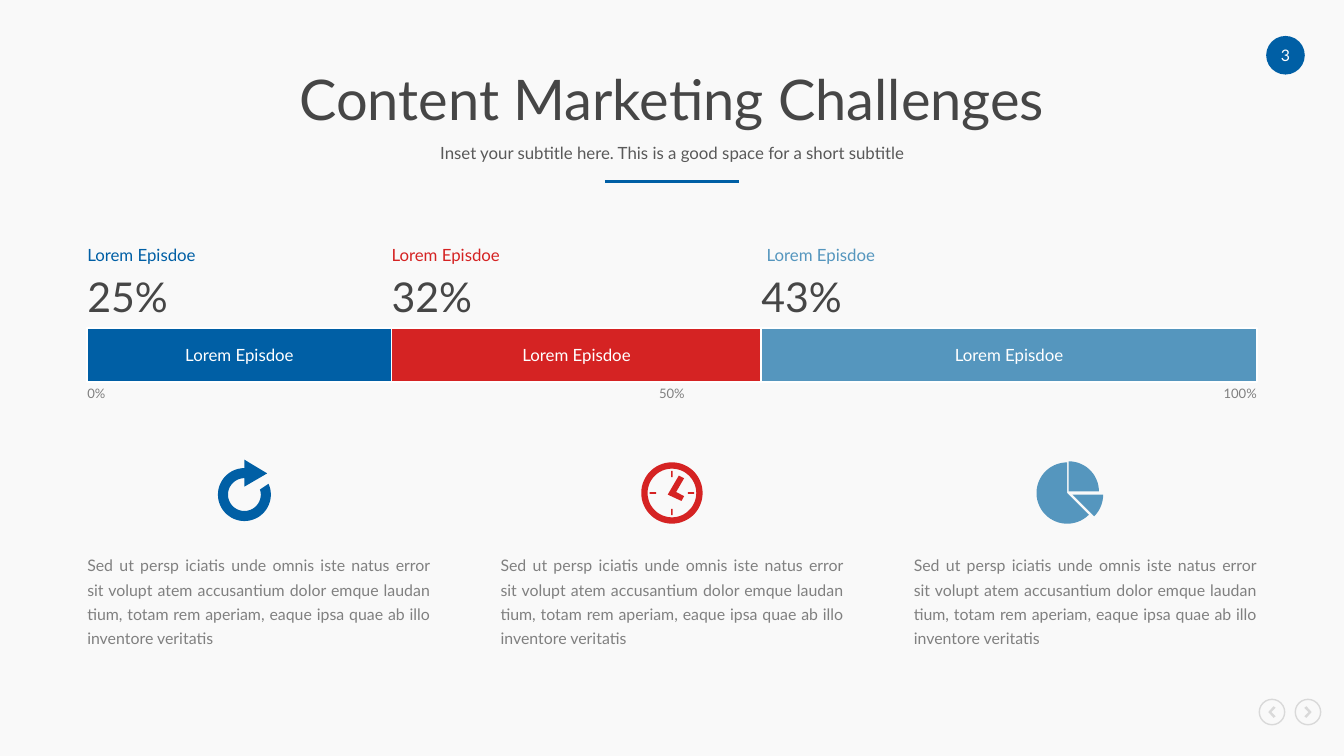
import math
from dataclasses import dataclass

import lxml.etree
import pptx
import pptx.dml.color
import pptx.enum.shapes
import pptx.enum.text
import pptx.oxml.ns
import pptx.util

Cm, Pt = pptx.util.Cm, pptx.util.Pt
ALIGN = pptx.enum.text.PP_ALIGN
MIDDLE = pptx.enum.text.MSO_ANCHOR.MIDDLE
SHAPE = pptx.enum.shapes.MSO_SHAPE
Point = tuple[float, float]
Path = list[Point]

BLUE, RED, SKY = "005FA5", "D52323", "5596BE"
DARK, SLATE, GRAY, PALE, WHITE = "464646", "595959", "808080", "D9D9D9", "FFFFFF"
LEFT, WIDE = 1.65, 22.1
LABEL = "Lorem Episdoe"
BODY = (
    "Sed ut persp iciatis unde omnis iste natus error sit volupt atem "
    "accusantium dolor emque laudan tium, totam rem aperiam, eaque ipsa "
    "quae ab illo inventore veritatis"
)


@dataclass
class Box:
    left: float
    top: float
    width: float
    height: float


@dataclass
class Style:
    size: float
    color: str
    align: ALIGN = ALIGN.LEFT


@dataclass
class Part:
    """One section of the bar."""
    share: str
    width: float
    color: str
    indent: float = 0


@dataclass
class Icon:
    x: float
    y: float
    color: str
    paths: list[Path]


def rgb(code: str):
    return pptx.dml.color.RGBColor.from_string(code)


def place(box: Box) -> list:
    return [Cm(n) for n in (box.left, box.top, box.width, box.height)]


def write(shape, text: str, style: Style):
    frame = shape.text_frame
    frame.word_wrap = True
    frame.margin_left = frame.margin_right = 0
    frame.margin_top = frame.margin_bottom = 0
    frame.text = text
    line = frame.paragraphs[0]
    line.alignment = style.align
    line.font.name = "Lato"
    line.font.size = Pt(style.size)
    line.font.color.rgb = rgb(style.color)
    return line


def add_text(slide, box: Box, text: str, style: Style):
    return write(slide.shapes.add_textbox(*place(box)), text, style)


def paint(shape, fill: str | None, edge: str | None = None, weight: float = 1) -> None:
    shape.shadow.inherit = False
    if fill:
        shape.fill.solid()
        shape.fill.fore_color.rgb = rgb(fill)
    else:
        shape.fill.background()
    if edge:
        shape.line.color.rgb = rgb(edge)
        shape.line.width = Pt(weight)
    else:
        shape.line.fill.background()


def add_shape(slide, kind: SHAPE, box: Box, fill: str | None, edge: str | None = None, weight: float = 1):
    shape = slide.shapes.add_shape(kind, *place(box))
    paint(shape, fill, edge, weight)
    return shape


def arc(radius: float, start: int, end: int, x: float = 0, y: float = 0) -> Path:
    """Points on a circle; degrees run clockwise from the right."""
    steps = max(2, abs(end - start) // 6)
    turns = [math.radians(start + (end - start) * i / steps) for i in range(steps + 1)]
    return [(x + radius * math.cos(a), y + radius * math.sin(a)) for a in turns]


def wedge(radius: float, start: int, end: int, x: float = 0, y: float = 0) -> Path:
    return [(x, y)] + arc(radius, start, end, x, y)


def block(x: float, y: float, wide: float, high: float) -> Path:
    """A rectangle around its centre."""
    a, b = wide / 2, high / 2
    return [(x - a, y - b), (x + a, y - b), (x + a, y + b), (x - a, y + b)]


def add_icon(slide, icon: Icon) -> None:
    paths = [[(Cm(icon.x + x), Cm(icon.y + y)) for x, y in path] for path in icon.paths]
    pen = slide.shapes.build_freeform(*paths[0][0])
    pen.add_line_segments(paths[0][1:], close=True)
    for path in paths[1:]:
        pen.move_to(*path[0])
        pen.add_line_segments(path[1:], close=True)
    paint(pen.convert_to_shape(), icon.color)


def add_head(slide) -> None:
    title = slide.shapes.title
    title.left, title.top, title.width, title.height = place(Box(LEFT, 1.22, WIDE, 1.27))
    write(title, "Content Marketing Challenges", Style(30, DARK, ALIGN.CENTER))
    title.text_frame.vertical_anchor = MIDDLE
    title.text_frame.auto_size = pptx.enum.text.MSO_AUTO_SIZE.NONE

    note = slide.shapes.add_textbox(*place(Box(LEFT, 2.57, WIDE, 0.64)))
    write(note, "Inset your subtitle here. This is a good space for a short subtitle",
          Style(9, SLATE, ALIGN.CENTER))
    note.text_frame.vertical_anchor = MIDDLE

    rule = slide.shapes.add_connector(
        pptx.enum.shapes.MSO_CONNECTOR.STRAIGHT, Cm(11.43), Cm(3.43), Cm(13.97), Cm(3.43))
    rule.line.color.rgb = rgb(BLUE)
    rule.line.width = Pt(1.5)
    lxml.etree.SubElement(rule._element.spPr, pptx.oxml.ns.qn("a:effectLst"))

    badge = add_shape(slide, SHAPE.OVAL, Box(23.93, 0.68, 0.73, 0.73), BLUE)
    write(badge, "3", Style(8.5, WHITE, ALIGN.CENTER))
    badge.text_frame.vertical_anchor = MIDDLE


def add_bar(slide, parts: list[Part]) -> None:
    left = LEFT
    for part in parts:
        add_text(slide, Box(left + part.indent, 4.62, 2.8, 0.41), LABEL, Style(9, part.color))
        add_text(slide, Box(left, 5.13, 2.03, 0.91), part.share, Style(22, DARK))
        bar = add_shape(slide, SHAPE.RECTANGLE, Box(left, 6.2, part.width, 1.02), part.color, WHITE)
        write(bar, LABEL, Style(9, WHITE, ALIGN.CENTER))
        bar.text_frame.vertical_anchor = MIDDLE
        left += part.width

    marks = [("0%", ALIGN.LEFT), ("50%", ALIGN.CENTER), ("100%", ALIGN.RIGHT)]
    for i, (text, align) in enumerate(marks):
        add_text(slide, Box(LEFT + i * (WIDE - 0.9) / 2, 7.29, 0.9, 0.3), text, Style(7, GRAY, align))


def add_notes(slide) -> None:
    width = 6.48
    for i in range(3):
        box = Box(LEFT + i * (WIDE - width) / 2, 10.41, width, 1.8)
        line = add_text(slide, box, BODY, Style(8.5, GRAY, ALIGN.JUSTIFY))
        line.line_spacing = Pt(13)
        line.space_after = Pt(12)


def add_arrows(slide) -> None:
    """The back and next buttons in the corner."""
    chevron = [(-0.07, 0), (0.03, -0.11), (0.07, -0.08), (-0.01, 0), (0.07, 0.08), (0.03, 0.11)]
    for x, side in ((24.04, 1), (24.72, -1)):
        add_shape(slide, SHAPE.OVAL, Box(x - 0.24, 13.22, 0.48, 0.48), None, PALE, 0.75)
        add_icon(slide, Icon(x, 13.46, PALE, [[(side * a, b) for a, b in chevron]]))


def main() -> None:
    deck = pptx.Presentation()
    deck.slide_width, deck.slide_height = Cm(25.4), Cm(14.29)
    slide = deck.slides.add_slide(deck.slide_layouts.get_by_name("Title Only"))
    slide.background.fill.solid()
    slide.background.fill.fore_color.rgb = rgb("F9F9F9")

    add_head(slide)
    add_bar(slide, [Part("25%", 5.75, BLUE), Part("32%", 6.99, RED), Part("43%", 9.36, SKY, 0.1)])

    arrow = [(0, -0.66), (0.43, -0.4), (0, -0.15)]
    redo = [arc(0.5, -24, 270) + arrow + arc(0.31, 270, -18)]
    hands = [(-0.08, 0.03), (0.13, -0.33), (0.23, -0.28), (0.08, -0.02), (0.23, 0.06), (0.18, 0.15)]
    ticks = [block(s * 0.36, 0, 0.12, 0.03) for s in (-1, 1)]
    ticks += [block(0, s * 0.36, 0.03, 0.12) for s in (-1, 1)]
    clock = [arc(0.58, 0, 360), arc(0.46, 360, 0), hands, *ticks]
    pie = [wedge(0.58, 45, 270), wedge(0.57, 270, 360, 0.03, -0.03), wedge(0.58, 0, 45, 0.1, 0.03)]
    for icon in (Icon(4.62, 9.35, BLUE, redo), Icon(12.7, 9.32, RED, clock), Icon(20.17, 9.32, SKY, pie)):
        add_icon(slide, icon)

    add_notes(slide)
    add_arrows(slide)
    deck.save("out.pptx")


if __name__ == "__main__":
    main()
